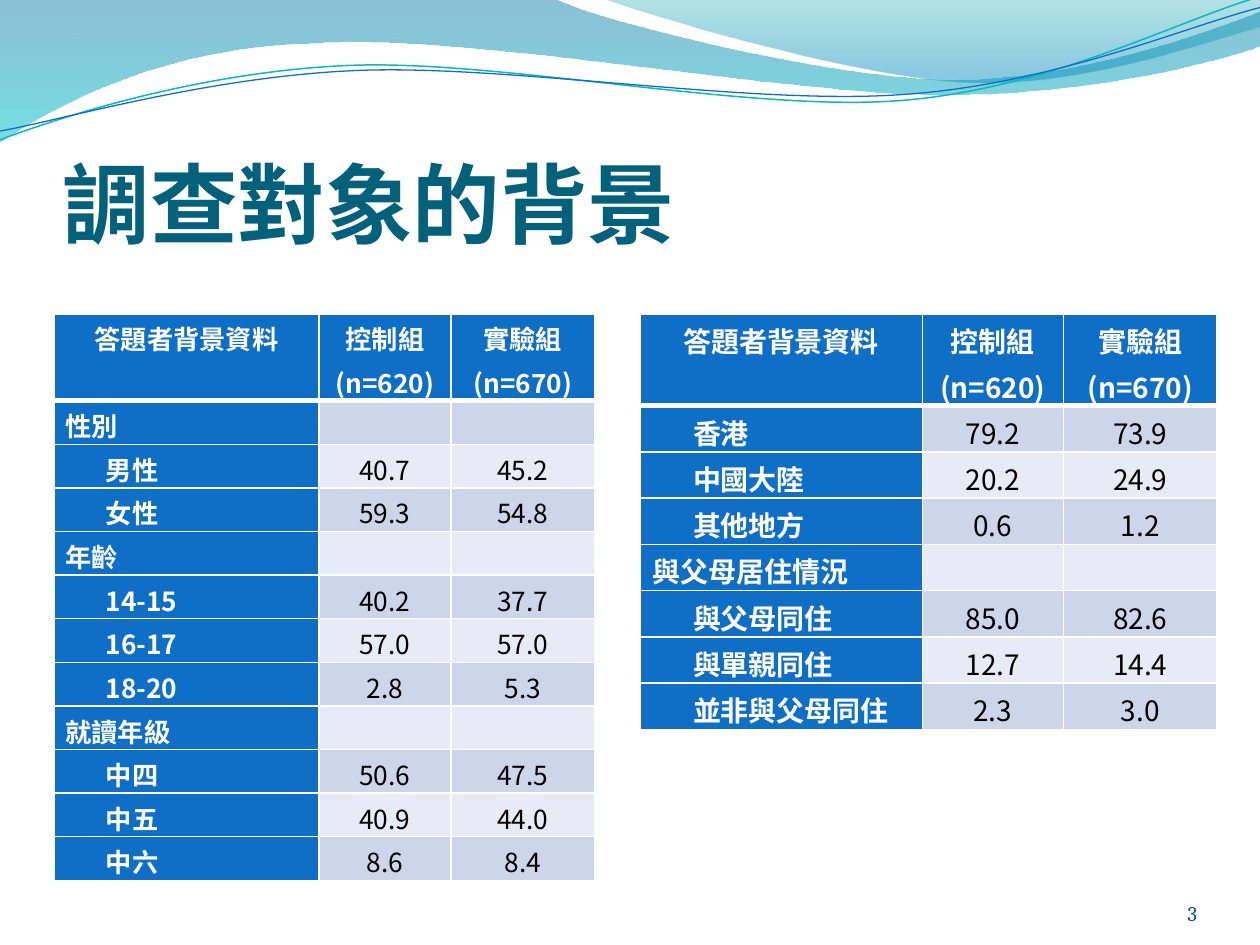
"""Builds the slide on the background of the survey respondents."""
from dataclasses import dataclass
from itertools import chain, islice

from lxml.etree import SubElement
from pptx import Presentation
from pptx.dml.color import RGBColor
from pptx.enum.text import MSO_ANCHOR, PP_ALIGN
from pptx.oxml import parse_xml
from pptx.oxml.ns import nsdecls, qn
from pptx.util import Inches, Pt


@dataclass(frozen=True)
class Theme:
    sans: str = "Noto Sans CJK SC"
    serif: str = "Cambria"
    title: str = "04617B"
    number: str = "045D75"
    accent: str = "0F6FC6"
    teal: str = "0AB8BF"
    white: str = "FFFFFF"
    black: str = "000000"
    bands: tuple = ("CCD5EA", "E7EBF5")
    deep_wave: tuple = ((0, "0074A1", 45), (1, "00C6CF", 55))
    light_wave: tuple = ((0, "00A1A9", 30), (0.8, "008BBF", 45))
    title_size: float = 50
    number_size: float = 12
    personal_size: float = 15
    family_size: float = 16


def write(frame, text, *, size, font, color, bold=False, align=PP_ALIGN.LEFT,
          spacing=None, indent=0):
    for index, line in enumerate(text.split("\n")):
        paragraph = frame.add_paragraph() if index else frame.paragraphs[0]
        paragraph.alignment = align
        paragraph.line_spacing = spacing
        if indent:
            paragraph._p.get_or_add_pPr().set("marL", str(Inches(indent)))
        if not line:
            paragraph._p.get_or_add_endParaRPr().set("sz", str(int(size * 100)))
            continue
        run = paragraph.add_run()
        run.text = line
        run.font.size = Pt(size)
        run.font.name = font
        run.font.bold = bold
        run.font.color.rgb = RGBColor.from_string(color)
        SubElement(run._r.get_or_add_rPr(), qn("a:ea"), typeface=font)


class Deck:
    def __init__(self, theme):
        self.theme = theme
        self.presentation = Presentation()
        self.presentation.slide_width = Inches(10)
        self.presentation.slide_height = Inches(7.5)
        self.slide = self.presentation.slides.add_slide(self.presentation.slide_layouts[6])

    def outline(self, start, segments, close):
        builder = self.slide.shapes.build_freeform(*map(Inches, start))
        builder.add_line_segments(
            [(Inches(x), Inches(y)) for x, y in chain(*segments)], close=close)
        shape = builder.convert_to_shape()
        shape.shadow.inherit = False
        route = next(shape._element.iter(qn("a:path")))
        steps = iter(route.findall(qn("a:lnTo")))
        for segment in segments:
            nodes = list(islice(steps, len(segment)))
            if len(nodes) == 3:
                curve = SubElement(route, qn("a:cubicBezTo"))
                nodes[0].addprevious(curve)
                for node in nodes:
                    curve.append(node[0])
                    route.remove(node)
        return shape

    def wave(self, start, segments, stops):
        shape = self.outline(start, segments, True)
        shape.line.fill.background()
        shape.fill.gradient()
        shape.fill.gradient_angle = 270
        for stop, (position, color, opacity) in zip(shape.fill.gradient_stops, stops):
            stop.position = position
            stop.color.rgb = RGBColor.from_string(color)
            SubElement(stop._gs.find(qn("a:srgbClr")), qn("a:alpha"), val=str(opacity * 1000))

    def ripple(self, start, segments, color, width):
        shape = self.outline(start, segments, False)
        shape.fill.background()
        shape.line.color.rgb = RGBColor.from_string(color)
        shape.line.width = Pt(width)

    def text(self, text, left, top, width, height, *, top_inset=0, **style):
        box = self.slide.shapes.add_textbox(*map(Inches, (left, top, width, height)))
        frame = box.text_frame
        frame.word_wrap = True
        frame.vertical_anchor = MSO_ANCHOR.BOTTOM
        frame.margin_left = frame.margin_right = frame.margin_bottom = 0
        frame.margin_top = Inches(top_inset)
        write(frame, text, **style)

    def cell(self, cell, text, *, fill, inset, bottom, **style):
        cell.margin_left = cell.margin_right = Inches(inset)
        cell.margin_top = cell.margin_bottom = 0
        cell.fill.solid()
        cell.fill.fore_color.rgb = RGBColor.from_string(fill)
        borders = (("lnL", 1), ("lnR", 1), ("lnT", 1), ("lnB", bottom))
        for index, (side, width) in enumerate(borders):
            cell._tc.get_or_add_tcPr().insert(index, parse_xml(
                f'<a:{side} {nsdecls("a")} w="{Pt(width)}"><a:solidFill>'
                f'<a:srgbClr val="{self.theme.white}"/></a:solidFill></a:{side}>'))
        write(cell.text_frame, text, font=self.theme.sans, spacing=1.15, **style)

    def table(self, rows, left, top, widths, header_height, body_height, size, inset):
        theme = self.theme
        body_rows = len(rows) - 1
        heights = [header_height] + [body_height / body_rows] * body_rows
        table = self.slide.shapes.add_table(
            len(rows), len(widths), Inches(left), Inches(top),
            Inches(sum(widths)), Inches(sum(heights))).table
        for column, width in zip(table.columns, widths):
            column.width = Inches(width)
        for r, (row, height) in enumerate(zip(rows, heights)):
            table.rows[r].height = Inches(height)
            is_section = not row[1]
            for c, text in enumerate(row):
                is_label = r == 0 or c == 0
                self.cell(
                    table.cell(r, c), text, size=size, inset=inset,
                    fill=theme.accent if is_label else theme.bands[(r - 1) % 2],
                    color=theme.white if is_label else theme.black, bold=is_label,
                    bottom=1 if r else 3,
                    align=PP_ALIGN.LEFT if r and c == 0 else PP_ALIGN.CENTER,
                    indent=0.32 if r and c == 0 and not is_section else 0)


HEADER = ("答題者背景資料", "控制組\n(n=620)", "實驗組\n(n=670)")
PERSONAL = (
    HEADER,
    ("性別", "", ""), ("男性", "40.7", "45.2"), ("女性", "59.3", "54.8"),
    ("年齡", "", ""), ("14-15", "40.2", "37.7"), ("16-17", "57.0", "57.0"),
    ("18-20", "2.8", "5.3"),
    ("就讀年級", "", ""), ("中四", "50.6", "47.5"), ("中五", "40.9", "44.0"),
    ("中六", "8.6", "8.4"),
)
FAMILY = (
    HEADER,
    ("香港", "79.2", "73.9"), ("中國大陸", "20.2", "24.9"), ("其他地方", "0.6", "1.2"),
    ("與父母居住情況", "", ""), ("與父母同住", "85.0", "82.6"),
    ("與單親同住", "12.7", "14.4"), ("並非與父母同住", "2.3", "3.0"),
)


def main():
    theme = Theme()
    deck = Deck(theme)

    deck.wave((0, 0), (
        ((4.4, -0.01),),
        ((4.76, 0.17), (6.64, 0.63), (7.58, 0.63)), ((8.53, 0.63), (9.58, 0.26), (10, 0.09)),
        ((10.01, 0.36),),
        ((9.83, 0.44), (8.7, 0.76), (7.46, 0.75)), ((6.22, 0.75), (3.82, 0.28), (2.57, 0.34)),
        ((1.29, 0.36), (0.46, 0.83), (-0.01, 1.13))), theme.deep_wave)
    deck.wave((4.79, -0.01), (
        ((5.09, 0.11), (6.82, 0.62), (7.69, 0.65)), ((8.56, 0.69), (9.61, 0.32), (10, 0.21)),
        ((10, 0),)), theme.light_wave)
    deck.ripple((0, 1.11), (
        ((0.48, 0.93), (1.58, 0.57), (2.77, 0.52)), ((3.95, 0.47), (5.93, 0.89), (7.13, 0.8)),
        ((8.33, 0.71), (9.38, 0.15), (9.98, -0.02))), theme.teal, 0.85)
    deck.ripple((0, 1.04), (
        ((0.47, 0.96), (1.64, 0.61), (2.83, 0.56)), ((4.03, 0.51), (5.97, 0.84), (7.17, 0.75)),
        ((8.36, 0.67), (9.41, 0.21), (10, 0.06))), theme.accent, 0.75)

    deck.text("調查對象的背景", 0.5, 0.77, 9, 1.25, top_inset=0.05, size=theme.title_size,
              font=theme.sans, color=theme.title, bold=True)
    deck.table(PERSONAL, 0.43, 2.49, (2.1, 1.05, 1.14), 0.69, 3.81,
               size=theme.personal_size, inset=0.09)
    deck.table(FAMILY, 5.08, 2.49, (2.24, 1.12, 1.22), 0.73, 2.57,
               size=theme.family_size, inset=0.1)
    deck.text("3", 8.67, 6.95, 0.83, 0.4, size=theme.number_size, font=theme.serif,
              color=theme.number, align=PP_ALIGN.RIGHT)
    deck.presentation.save("out.pptx")


if __name__ == "__main__":
    main()
